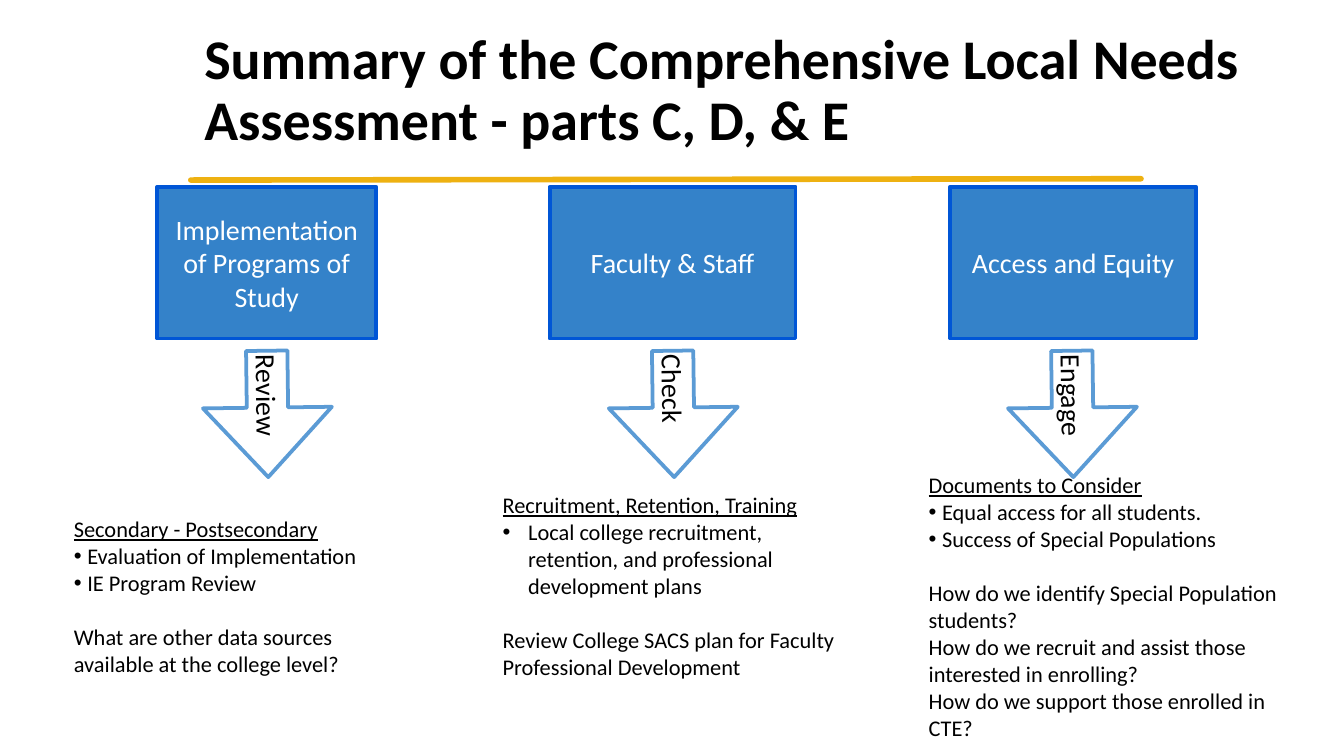
from dataclasses import dataclass

from lxml import etree
from pptx import Presentation
from pptx.dml.color import RGBColor
from pptx.enum.shapes import MSO_CONNECTOR, MSO_SHAPE
from pptx.enum.text import MSO_ANCHOR, MSO_AUTO_SIZE, PP_ALIGN
from pptx.oxml.ns import qn
from pptx.util import Inches, Pt

RECT, ARROW = MSO_SHAPE.RECTANGLE, MSO_SHAPE.RIGHT_ARROW
STRAIGHT = MSO_CONNECTOR.STRAIGHT
MIDDLE = MSO_ANCHOR.MIDDLE
LEFT, CENTER = PP_ALIGN.LEFT, PP_ALIGN.CENTER
FIXED, GROW = MSO_AUTO_SIZE.NONE, MSO_AUTO_SIZE.SHAPE_TO_FIT_TEXT


@dataclass(frozen=True)
class Theme:
    font: str = "Calibri"
    black: str = "000000"
    white: str = "FFFFFF"
    blue: str = "3482C9"
    edge: str = "0056D6"
    sky: str = "5B9BD5"
    gold: str = "EEB111"
    head: int = 30
    label: int = 15
    body: int = 12
    gap: float = 14.6


def write(para, text, font, size, color, bold=False, under=False,
          align=LEFT, dent=0, before=0, lead=None):
    props = para._p.get_or_add_pPr()
    if dent:
        props.set("marL", str(Inches(dent)))
        props.set("indent", str(-Inches(dent)))
        etree.SubElement(props, qn("a:buFont"), typeface="Arial")
        etree.SubElement(props, qn("a:buChar"), char="•")
    para.text = text
    para.alignment = align
    para.space_before = Pt(before)
    if lead:
        para.line_spacing = lead
    for run in para.runs:
        run.font.name = font
        run.font.size = Pt(size)
        run.font.bold = bold
        run.font.underline = under
        run.font.color.rgb = RGBColor.from_string(color)


class Deck:
    """Holds the theme and the current slide, and draws each kind of element."""

    def __init__(self, theme):
        self.theme = theme
        self.file = Presentation()
        self.file.slide_width = Inches(10)
        self.file.slide_height = Inches(10) * 9 // 16
        self.slide = self.file.slides.add_slide(self.file.slide_layouts[5])

    def frame(self, shape, inset=0.03, fit=FIXED):
        frame = shape.text_frame
        frame.word_wrap = True
        frame.auto_size = fit
        frame.vertical_anchor = MIDDLE
        frame.margin_left = frame.margin_right = Inches(inset)
        frame.margin_top = frame.margin_bottom = Inches(min(inset, 0.05))
        return frame

    def title(self, text, left, top, width, height):
        shape = self.slide.shapes.title
        shape.left, shape.top = Inches(left), Inches(top)
        shape.width, shape.height = Inches(width), Inches(height)
        para = self.frame(shape, 0.1).paragraphs[0]
        write(para, text, self.theme.font, self.theme.head, self.theme.black,
              bold=True, lead=0.9)

    def rule(self, *ends):
        line = self.slide.shapes.add_connector(STRAIGHT, *map(Inches, ends))
        line.line.color.rgb = RGBColor.from_string(self.theme.gold)
        line.line.width = Pt(3)
        line.line._ln.set("cap", "rnd")
        etree.SubElement(line._element.spPr, qn("a:effectLst"))

    def shape(self, kind, text, area, fill, edge, color, align):
        shape = self.slide.shapes.add_shape(kind, *map(Inches, area))
        shape.shadow.inherit = False
        shape.fill.solid()
        shape.fill.fore_color.rgb = RGBColor.from_string(fill)
        shape.line.color.rgb = RGBColor.from_string(edge)
        shape.line.width = Pt(2)
        write(self.frame(shape).paragraphs[0], text, self.theme.font,
              self.theme.label, color, align=align)
        return shape

    def box(self, text, left, width):
        self.shape(RECT, text, (left, 1.39, width, 1.13), self.theme.blue,
                   self.theme.edge, self.theme.white, CENTER)

    def arrow(self, text, left):
        arrow = self.shape(ARROW, text, (left, 2.6, 0.94, 0.96), self.theme.white,
                           self.theme.sky, self.theme.black, LEFT)
        arrow.rotation = 89.3
        arrow.adjustments[0], arrow.adjustments[1] = 0.32, 0.55

    def notes(self, area, head, items, asks, dent):
        shape = self.slide.shapes.add_textbox(*map(Inches, area))
        frame = self.frame(shape, fit=GROW)
        rows = [(head, {"under": True})]
        rows += [(item, {"dent": dent}) for item in items]
        rows += [(ask, {"before": 0 if i else self.theme.gap})
                 for i, ask in enumerate(asks)]
        for i, (text, style) in enumerate(rows):
            para = frame.add_paragraph() if i else frame.paragraphs[0]
            write(para, text, self.theme.font, self.theme.body,
                  self.theme.black, **style)


COLUMNS = [
    {"box": ("Implementation of Programs of Study", 1.17, 1.63),
     "arrow": ("Review", 1.52),
     "notes": ((0.52, 3.8, 2.6, 1.27), "Secondary - Postsecondary",
               ["Evaluation of Implementation", "IE Program Review"],
               ["What are other data sources available at the college level?"],
               0.1)},
    {"box": ("Faculty & Staff", 4.09, 1.83),
     "arrow": ("Check", 4.54),
     "notes": ((3.71, 3.62, 2.68, 1.47), "Recruitment, Retention, Training",
               ["Local college recruitment,\nretention, and professional\n"
                "development plans"],
               ["Review College SACS plan for Faculty Professional Development"],
               0.19)},
    {"box": ("Access and Equity", 7.07, 1.83),
     "arrow": ("Engage", 7.51),
     "notes": ((6.88, 3.47, 2.92, 2.08), "Documents to Consider",
               ["Equal access for all students.", "Success of Special Populations"],
               ["How do we identify Special Population students?",
                "How do we recruit and assist those interested in enrolling?",
                "How do we support those enrolled in CTE?"],
               0.1)},
]


def main():
    deck = Deck(Theme())
    deck.rule(1.42, 1.34, 8.49, 1.33)
    deck.title("Summary of the Comprehensive Local Needs Assessment - parts C, D, & E",
               1.42, 0.14, 8.05, 1.09)
    for column in COLUMNS:
        deck.box(*column["box"])
        deck.notes(*column["notes"])
        deck.arrow(*column["arrow"])
    deck.file.save("out.pptx")


if __name__ == "__main__":
    main()
